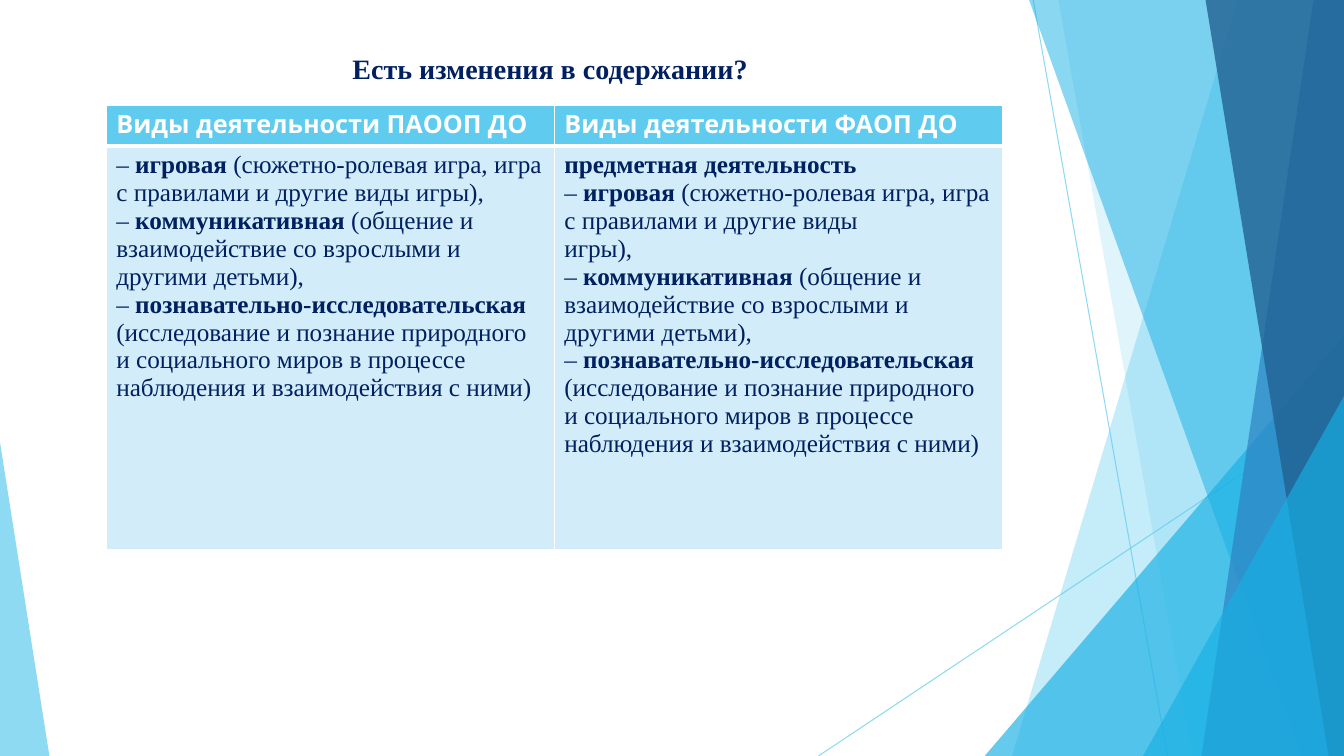
"""Build a slide comparing activity types in two preschool programmes."""
from dataclasses import dataclass

from lxml import etree
from pptx import Presentation
from pptx.dml.color import RGBColor
from pptx.enum.shapes import MSO_CONNECTOR, MSO_SHAPE
from pptx.enum.text import PP_ALIGN
from pptx.oxml.ns import qn
from pptx.util import Pt

STRAIGHT = MSO_CONNECTOR.STRAIGHT
TRIANGLE = MSO_SHAPE.ISOSCELES_TRIANGLE
CENTER = PP_ALIGN.CENTER

SKY = RGBColor(0x5F, 0xCB, 0xEF)
CYAN = RGBColor(0x17, 0xB0, 0xE4)
BLUE = RGBColor(0x2E, 0x83, 0xC3)
DEEP_BLUE = RGBColor(0x22, 0x62, 0x92)
PALE_BLUE = RGBColor(0xD2, 0xEC, 0xF9)
NAVY = RGBColor(0x00, 0x20, 0x60)
WHITE = RGBColor(0xFF, 0xFF, 0xFF)

SERIF = "Times New Roman"
SANS = "Karla"
WIDTH, HEIGHT = 960, 540
HEADER_HEIGHT, BODY_HEIGHT = 29.2, 288
COLUMN_WIDTH = 320


@dataclass(frozen=True)
class Ray:
    start: tuple[float, float]
    end: tuple[float, float]


@dataclass(frozen=True)
class Band:
    top_x: float
    bottom_x: float
    color: RGBColor
    opacity: int


@dataclass(frozen=True)
class Wedge:
    left: float
    top: float
    width: float
    apex: float
    color: RGBColor
    opacity: int


@dataclass(frozen=True)
class Line:
    dash: str = ""
    name: str = ""
    details: str = ""


@dataclass(frozen=True)
class Column:
    heading: str
    lines: tuple[Line, ...]


RAYS = (Ray((738, 0), (834, HEIGHT)), Ray((WIDTH, 290), (584.6, HEIGHT)))
FACETS = (
    Band(884.2, 722.9, SKY, 36),
    Band(756, 851.8, SKY, 20),
    Wedge(703.4, 239.8, 256.6, 1, CYAN, 66),
    Band(735.1, 929.5, CYAN, 50),
    Band(938.2, 858.2, BLUE, 70),
    Band(861.1, 949, DEEP_BLUE, 80),
    Wedge(816.5, 283, 143.5, 1, CYAN, 66),
    Wedge(0, 316, 35.3, 0, SKY, 70),
)
SHARED_LINES = (
    Line("– ", "коммуникативная ", "(общение и взаимодействие со взрослыми и другими детьми),"),
    Line("– ", "познавательно-исследовательская ",
         "(исследование и познание природного и социального миров "
         "в процессе наблюдения и взаимодействия с ними)"),
)
COLUMNS = (
    Column("Виды деятельности ПАООП ДО", (
        Line("– ", "игровая ", "(сюжетно-ролевая игра, игра с правилами и другие виды игры),"),
        *SHARED_LINES,
    )),
    Column("Виды деятельности ФАОП ДО", (
        Line(name="предметная деятельность"),
        Line("– ", "игровая ", "(сюжетно-ролевая игра, игра с правилами и другие виды"),
        Line(details="игры),"),
        *SHARED_LINES,
    )),
)


def set_opacity(properties, percent: int) -> None:
    """Make the first colour of the shape properties translucent."""
    color = next(properties.iter(qn("a:srgbClr")))
    etree.SubElement(color, qn("a:alpha"), val=str(percent * 1000))


def draw_ray(slide, ray: Ray) -> None:
    """Draw a thin translucent line."""
    connector = slide.shapes.add_connector(STRAIGHT, *map(Pt, ray.start + ray.end))
    connector.line.color.rgb = SKY
    connector.line.width = Pt(0.75)
    properties = connector._element.spPr
    set_opacity(properties, 70)
    etree.SubElement(properties, qn("a:effectLst"))


def draw_facet(slide, facet: Band | Wedge) -> None:
    """Draw a translucent band or wedge."""
    if isinstance(facet, Band):
        builder = slide.shapes.build_freeform(Pt(facet.top_x), Pt(0))
        corners = ((WIDTH, 0), (WIDTH, HEIGHT), (facet.bottom_x, HEIGHT))
        builder.add_line_segments([(Pt(x), Pt(y)) for x, y in corners])
        shape = builder.convert_to_shape()
    else:
        shape = slide.shapes.add_shape(
            TRIANGLE, Pt(facet.left), Pt(facet.top), Pt(facet.width), Pt(HEIGHT - facet.top))
        shape.adjustments[0] = facet.apex
    shape.shadow.inherit = False
    shape.line.fill.background()
    shape.fill.solid()
    shape.fill.fore_color.rgb = facet.color
    set_opacity(shape._element.spPr, facet.opacity)


def add_run(paragraph, text: str, font: str, size: float, color: RGBColor, bold: bool) -> None:
    """Append a formatted run."""
    run = paragraph.add_run()
    run.text = text
    run.font.name = font
    run.font.size = Pt(size)
    run.font.color.rgb = color
    run.font.bold = bold


def style_cell(cell, fill: RGBColor, top: float, bottom: float) -> None:
    """Fill a cell and give it white borders."""
    cell.fill.solid()
    cell.fill.fore_color.rgb = fill
    properties = cell._tc.get_or_add_tcPr()
    borders = (("a:lnL", 1), ("a:lnR", 1), ("a:lnT", top), ("a:lnB", bottom))
    for position, (tag, width) in enumerate(borders):
        border = etree.Element(qn(tag), w=str(Pt(width)))
        solid = etree.SubElement(border, qn("a:solidFill"))
        etree.SubElement(solid, qn("a:srgbClr"), val=str(WHITE))
        properties.insert(position, border)


def add_title(slide) -> None:
    """Add the centred question above the table."""
    box = slide.shapes.add_textbox(Pt(155.5), Pt(33.1), Pt(480), Pt(31.5))
    box.text_frame.word_wrap = True
    paragraph = box.text_frame.paragraphs[0]
    paragraph.alignment = CENTER
    add_run(paragraph, "Есть изменения в содержании? ", SERIF, 20, NAVY, True)


def add_comparison(slide) -> None:
    """Add the two-column table of activities."""
    table = slide.shapes.add_table(
        2, len(COLUMNS), Pt(75.9), Pt(75.2), Pt(COLUMN_WIDTH * len(COLUMNS)),
        Pt(HEADER_HEIGHT + BODY_HEIGHT)).table
    table.horz_banding = False
    table.rows[0].height = Pt(HEADER_HEIGHT)
    table.rows[1].height = Pt(BODY_HEIGHT)
    for index, column in enumerate(COLUMNS):
        table.columns[index].width = Pt(COLUMN_WIDTH)
        header, body = table.cell(0, index), table.cell(1, index)
        style_cell(header, SKY, 1, 3)
        style_cell(body, PALE_BLUE, 3, 1)
        add_run(header.text_frame.paragraphs[0], column.heading, SANS, 18, WHITE, True)
        for number, line in enumerate(column.lines):
            frame = body.text_frame
            paragraph = frame.add_paragraph() if number else frame.paragraphs[0]
            for text, bold in ((line.dash, False), (line.name, True), (line.details, False)):
                if text:
                    add_run(paragraph, text, SERIF, 18, NAVY, bold)


def main() -> None:
    """Build and save the presentation."""
    presentation = Presentation()
    presentation.slide_width, presentation.slide_height = Pt(WIDTH), Pt(HEIGHT)
    slide = presentation.slides.add_slide(presentation.slide_layouts[6])
    for ray in RAYS:
        draw_ray(slide, ray)
    for facet in FACETS:
        draw_facet(slide, facet)
    add_title(slide)
    add_comparison(slide)
    presentation.save("out.pptx")


if __name__ == "__main__":
    main()
